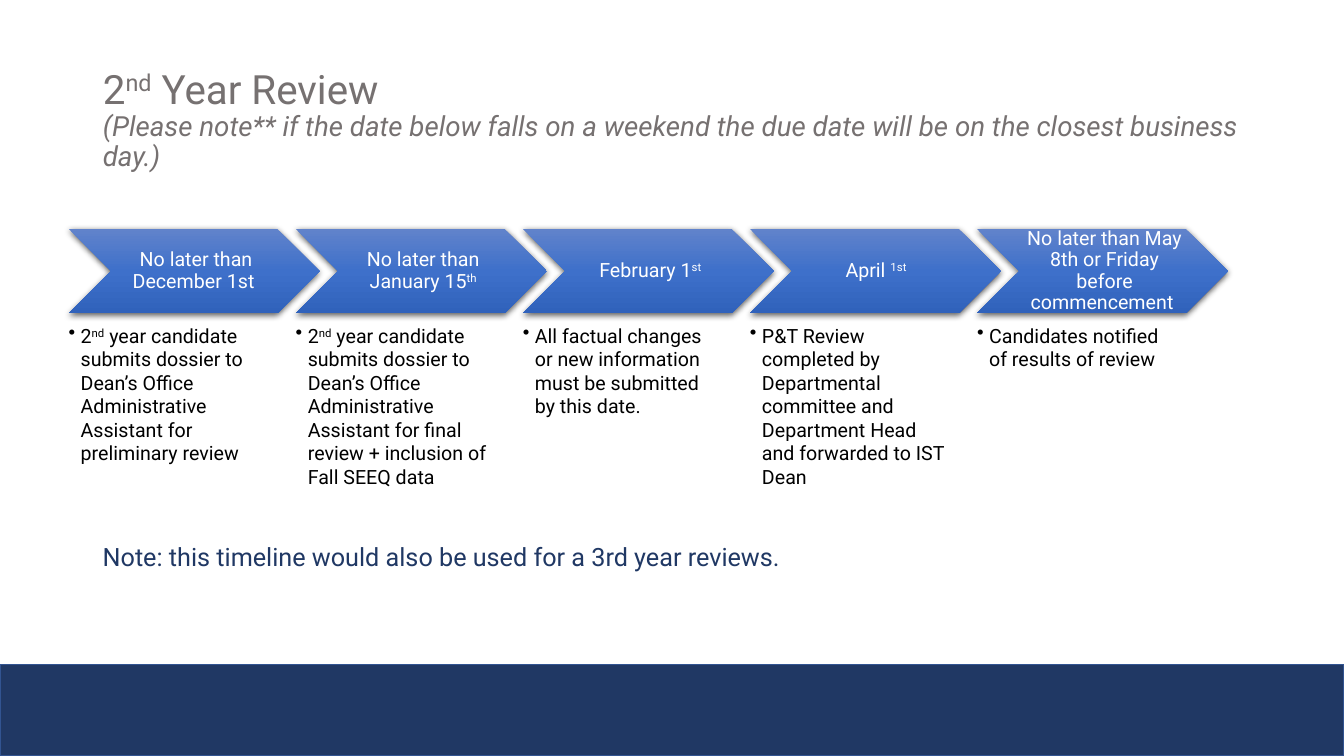
import pptx
import pptx.util
import pptx.dml.color
import pptx.enum.shapes
import pptx.enum.text
import pptx.oxml
import pptx.oxml.ns
from pptx.util import Inches, Pt

# Content: text in odd positions of a list is superscript
TITLE = ["2", "nd", " Year Review"]
SUBTITLE = ("(Please note** if the date below falls on a weekend the due date "
            "will be on the closest business day.)")
STEPS = [
    (["No later than December 1st "],
     ["2", "nd", " year candidate submits dossier to Dean’s Office "
      "Administrative Assistant for preliminary review"]),
    (["No later than January 15", "th"],
     ["2", "nd", " year candidate submits dossier to Dean’s Office "
      "Administrative Assistant for final review + inclusion of Fall SEEQ data"]),
    (["February 1", "st"],
     ["All factual changes or new information must be submitted by this date."]),
    (["April ", "1st "],
     ["P&T Review completed by Departmental committee and Department Head "
      "and forwarded to IST Dean"]),
    (["No later than May 8th or Friday before commencement "],
     ["Candidates notified of results of review"]),
]
NOTE = "Note: this timeline would also be used for a 3rd year reviews. "

FONT = "Roboto"
COLORS = {"navy": "203864", "navy_edge": "325491", "gray": "767171",
          "white": "FFFFFF", "black": "000000"}
GRADIENT = [(0, "6183CB"), (50, "3E70CA"), (100, "3062BB")]

# Layout
STEP_LEFT, STEP_PITCH = 0.68, 2.2525
CHEVRON_TOP, CHEVRON_WIDTH, CHEVRON_HEIGHT = 2.27, 2.49, 0.84
DETAIL_TOP, DETAIL_WIDTH, DETAIL_HEIGHT = 3.21, 1.99, 1.55
NS = pptx.oxml.ns.nsdecls("a")


def rgb(name):
    return pptx.dml.color.RGBColor.from_string(COLORS[name])


def add_runs(paragraph, pieces, size, color, italic=False):
    for index, piece in enumerate(pieces):
        run = paragraph.add_run()
        run.text = piece
        run.font.name = FONT
        run.font.size = Pt(size)
        run.font.color.rgb = rgb(color)
        run.font.italic = italic
        if index % 2:
            run._r.get_or_add_rPr().set("baseline", "30000")


def set_frame(frame, margins, anchor):
    frame.word_wrap = True
    frame.auto_size = pptx.enum.text.MSO_AUTO_SIZE.NONE
    frame.vertical_anchor = anchor
    (frame.margin_left, frame.margin_top,
     frame.margin_right, frame.margin_bottom) = [Inches(m) for m in margins]


def style_chevron(chevron):
    chevron.line.fill.background()
    chevron.fill.gradient()
    chevron.fill.gradient_angle = 270
    properties = chevron._element.spPr
    stops = properties.find(".//" + pptx.oxml.ns.qn("a:gsLst"))
    for stop in list(stops):
        stops.remove(stop)
    for position, color in GRADIENT:
        stops.append(pptx.oxml.parse_xml(
            f'<a:gs {NS} pos="{position * 1000}"><a:srgbClr val="{color}"/></a:gs>'))
    chevron.shadow.inherit = False
    properties.find(pptx.oxml.ns.qn("a:effectLst")).append(pptx.oxml.parse_xml(
        f'<a:outerShdw {NS} blurRad="{Pt(4.5)}" dist="{Pt(1.5)}" dir="5400000" '
        f'algn="ctr" rotWithShape="0"><a:srgbClr val="{COLORS["black"]}">'
        '<a:alpha val="63000"/></a:srgbClr></a:outerShdw>'))


def add_bullet(paragraph):
    properties = paragraph._p.get_or_add_pPr()
    properties.set("marL", str(Inches(0.12)))
    properties.set("indent", str(-Inches(0.12)))
    properties.append(pptx.oxml.parse_xml(f'<a:buChar {NS} char="•"/>'))


def main():
    deck = pptx.Presentation()
    deck.slide_width, deck.slide_height = Inches(13.33), Inches(7.5)
    slide = deck.slides.add_slide(deck.slide_layouts[5])
    shapes = slide.shapes
    presets = pptx.enum.shapes.MSO_SHAPE
    anchors = pptx.enum.text.MSO_ANCHOR
    aligns = pptx.enum.text.PP_ALIGN

    # Footer band
    band = shapes.add_shape(presets.RECTANGLE, 0, Inches(6.59),
                            Inches(13.33), Inches(0.91))
    band.shadow.inherit = False
    band.fill.solid()
    band.fill.fore_color.rgb = rgb("navy")
    band.line.color.rgb = rgb("navy_edge")
    band.line.width = Pt(1)

    # Title with its remark
    title = shapes.title
    title.left, title.top = Inches(0.92), Inches(0.86)
    title.width, title.height = Inches(11.5), Inches(0.68)
    set_frame(title.text_frame, (0.1, 0.05, 0.1, 0.05), anchors.MIDDLE)
    heading = title.text_frame.paragraphs[0]
    heading.alignment = aligns.LEFT
    heading.line_spacing = 0.9
    add_runs(heading, TITLE, 28.8, "gray")
    heading.add_line_break()
    add_runs(heading, [SUBTITLE], 19.8, "gray", italic=True)

    # Timeline steps
    for index, (date, detail) in enumerate(STEPS):
        left = Inches(STEP_LEFT + index * STEP_PITCH)
        chevron = shapes.add_shape(presets.CHEVRON, left, Inches(CHEVRON_TOP),
                                   Inches(CHEVRON_WIDTH), Inches(CHEVRON_HEIGHT))
        style_chevron(chevron)
        set_frame(chevron.text_frame, (0.06, 0.02, 0.02, 0.02), anchors.MIDDLE)
        date_line = chevron.text_frame.paragraphs[0]
        date_line.alignment = aligns.CENTER
        date_line.line_spacing = 0.9
        add_runs(date_line, date, 14, "white")

        detail_box = shapes.add_textbox(left, Inches(DETAIL_TOP),
                                        Inches(DETAIL_WIDTH), Inches(DETAIL_HEIGHT))
        set_frame(detail_box.text_frame, (0, 0, 0, 0), anchors.TOP)
        detail_line = detail_box.text_frame.paragraphs[0]
        add_bullet(detail_line)
        add_runs(detail_line, detail, 14, "black")

    # Closing note
    note = shapes.add_textbox(Inches(0.92), Inches(5.32), Inches(7.88), Inches(0.4))
    set_frame(note.text_frame, (0.1, 0.05, 0.1, 0.05), anchors.TOP)
    add_runs(note.text_frame.paragraphs[0], [NOTE], 18, "navy")

    deck.save("out.pptx")


if __name__ == "__main__":
    main()
